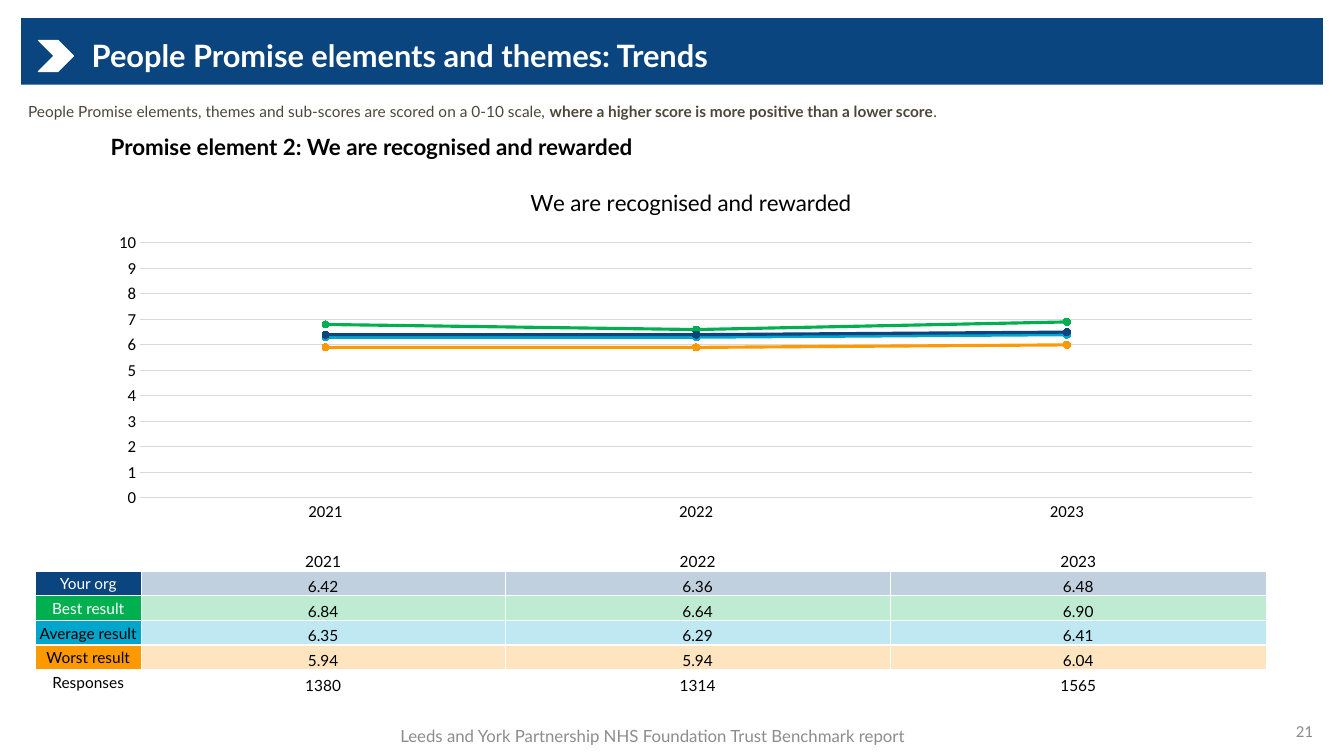
from pptx import Presentation
from pptx.chart.data import CategoryChartData
from pptx.dml.color import RGBColor
from pptx.enum.chart import XL_CHART_TYPE as ChartType, XL_MARKER_STYLE as Marker, XL_TICK_MARK as Tick
from pptx.enum.shapes import MSO_SHAPE as Preset
from pptx.enum.text import MSO_ANCHOR as Anchor, MSO_AUTO_SIZE as AutoSize, PP_ALIGN as Align
from pptx.oxml import parse_xml
from pptx.oxml.ns import nsdecls, qn
from pptx.util import Inches, Pt

WHITE = RGBColor(0xFF, 0xFF, 0xFF)
BLACK = RGBColor(0, 0, 0)
NAVY = RGBColor(0x0B, 0x45, 0x7F)
GREEN = RGBColor(0x00, 0xB0, 0x50)
CYAN = RGBColor(0x00, 0xA5, 0xCC)
ORANGE = RGBColor(0xFF, 0x99, 0x00)
BROWN = RGBColor(0x4D, 0x46, 0x39)
GREY = RGBColor(0x8C, 0x8C, 0x8C)
GRID = RGBColor(0xD9, 0xD9, 0xD9)

YEARS = ["2021", "2022", "2023"]
# label: (colour, label text colour, yearly scores)
SCORES = {
    "Your org": (NAVY, WHITE, (6.42, 6.36, 6.48)),
    "Best result": (GREEN, WHITE, (6.84, 6.64, 6.90)),
    "Average result": (CYAN, BLACK, (6.35, 6.29, 6.41)),
    "Worst result": (ORANGE, BLACK, (5.94, 5.94, 6.04)),
}
DRAW_ORDER = ["Average result", "Best result", "Worst result", "Your org"]
RESPONSES = (1380, 1314, 1565)


def format_font(font, size, color, bold=False, name="Lato"):
    for attribute, value in {"size": Pt(size), "bold": bold, "name": name}.items():
        setattr(font, attribute, value)
    font.color.rgb = color


def write(frame, parts, size, color, align=Align.LEFT, anchor=Anchor.TOP, name="Lato"):
    """Fill a frame with one paragraph of (text, bold) parts."""
    settings = {"word_wrap": True, "auto_size": AutoSize.NONE, "vertical_anchor": anchor}
    for attribute, value in settings.items():
        setattr(frame, attribute, value)
    paragraph = frame.paragraphs[0]
    paragraph.alignment = align
    for text, bold in parts:
        run = paragraph.add_run()
        run.text = text
        format_font(run.font, size, color, bold, name)
    return paragraph


def add_text(slide, box, parts, size, color, **layout):
    frame = slide.shapes.add_textbox(*map(Inches, box)).text_frame
    write(frame, parts, size, color, **layout)


def add_header(slide, left, top, width, height):
    # Bar and chevron
    for preset, box, color in (
        (Preset.RECTANGLE, (left, top, width, height), NAVY),
        (Preset.CHEVRON, (left + 0.17, top + 0.22, 0.35, 0.31), WHITE),
    ):
        shape = slide.shapes.add_shape(preset, *map(Inches, box))
        shape.shadow.inherit = False
        shape.fill.solid()
        shape.fill.fore_color.rgb = color
        shape.line.color.rgb = color
        shape.line.width = Pt(0.75)
        if preset == Preset.RECTANGLE:
            shape.line.fill.background()

    # Title, brought in front of the bar
    title = slide.shapes.title
    place = {"left": left + 0.6, "top": top + 0.17, "width": 9.61, "height": 0.44}
    for attribute, value in place.items():
        setattr(title, attribute, Inches(value))
    heading = write(title.text_frame, [("People Promise elements and themes: Trends", True)],
                    22, WHITE, anchor=Anchor.MIDDLE)
    heading.line_spacing = 0.9
    title._element.getparent().append(title._element)


def set_layout(element, **fractions):
    """Fix the place of a chart part as fractions of the chart."""
    for old in element.findall(qn("c:layout")):
        element.remove(old)
    inner = '<c:layoutTarget val="inner"/>' if "w" in fractions else ""
    modes = "".join(f'<c:{axis}Mode val="edge"/>' for axis in "xy")
    values = "".join(f'<c:{key} val="{value}"/>' for key, value in fractions.items())
    layout = parse_xml(f'<c:layout {nsdecls("c")}><c:manualLayout>{inner}{modes}{values}'
                       '</c:manualLayout></c:layout>')
    text = element.find(qn("c:tx"))
    element.insert(0 if text is None else element.index(text) + 1, layout)


def add_trend_chart(slide, left, top, width, height):
    data = CategoryChartData(number_format="0.0")
    data.categories = YEARS
    for label in DRAW_ORDER:
        data.add_series(label, [round(score, 1) for score in SCORES[label][2]])
    chart = slide.shapes.add_chart(ChartType.LINE_MARKERS, *map(Inches, (left, top, width, height)),
                                   data).chart
    format_font(chart.font, 10, BLACK, name="Calibri")
    chart.has_legend = False

    # Title and plot area
    chart.has_title = True
    chart_heading = chart.chart_title.text_frame.paragraphs[0].add_run()
    chart_heading.text = "We are recognised and rewarded"
    format_font(chart_heading.font, 16, BLACK)
    chart.chart_title.include_in_layout = False
    set_layout(chart.chart_title._element, x=4.27 / width, y=0.09 / height)
    set_layout(chart._chartSpace.chart.plotArea,
               x=0.44 / width, y=0.69 / height, w=11.03 / width, h=2.53 / height)

    # Axes
    for axis in (chart.category_axis, chart.value_axis):
        axis.major_tick_mark = axis.minor_tick_mark = Tick.NONE
        format_font(axis.tick_labels.font, 12, BLACK, name="Calibri")
    scale = {"minimum_scale": 0, "maximum_scale": 10, "major_unit": 1, "has_major_gridlines": True}
    for attribute, value in scale.items():
        setattr(chart.value_axis, attribute, value)
    chart.value_axis.tick_labels.number_format = "0"
    chart.value_axis.tick_labels.number_format_is_linked = False
    chart.value_axis.format.line.fill.background()
    for line in (chart.category_axis.format.line, chart.value_axis.major_gridlines.format.line):
        line.color.rgb = GRID
        line.width = Pt(0.75)

    # Score lines
    chart.plots[0].vary_by_categories = False
    for series in chart.plots[0].series:
        color = SCORES[series.name][0]
        series.smooth = False
        series.format.line.color.rgb = color
        series.format.line.width = Pt(2.25)
        series.marker.style = Marker.CIRCLE
        series.marker.size = 5
        series.marker.format.fill.solid()
        series.marker.format.fill.fore_color.rgb = color
        series.marker.format.line.color.rgb = color


def format_cell(cell, text, fill, color, anchor, alpha=None):
    margins = {"margin_left": 0.01, "margin_right": 0.01, "margin_top": 0.01, "margin_bottom": 0}
    for attribute, value in margins.items():
        setattr(cell, attribute, Inches(value))
    cell.vertical_anchor = anchor
    cell.fill.solid()
    cell.fill.fore_color.rgb = fill
    properties = cell._tc.get_or_add_tcPr()
    if alpha:
        tint = properties.find(".//" + qn("a:srgbClr"))
        tint.append(parse_xml(f'<a:alpha {nsdecls("a")} val="{alpha * 1000}"/>'))
    for index, side in enumerate("LRTB"):
        properties.insert(index, parse_xml(
            f'<a:ln{side} {nsdecls("a")} w="12700"><a:solidFill><a:srgbClr val="{WHITE}"/>'
            f'</a:solidFill></a:ln{side}>'))
    paragraph = cell.text_frame.paragraphs[0]
    paragraph.alignment = Align.CENTER
    if text:
        run = paragraph.add_run()
        run.text = text
        format_font(run.font, 11, color)
    else:
        paragraph._p.append(parse_xml(f'<a:endParaRPr {nsdecls("a")} sz="1100"/>'))


def add_score_table(slide, left, top, width, height):
    # label, fill, label colour, tint of the value cells, values
    rows = [("", WHITE, BLACK, None, YEARS)]
    rows += [(label, fill, color, 25, [f"{score:.2f}" for score in scores])
             for label, (fill, color, scores) in SCORES.items()]
    rows.append(("Responses", WHITE, BLACK, None, [str(count) for count in RESPONSES]))

    table = slide.shapes.add_table(len(rows), len(YEARS) + 1,
                                   *map(Inches, (left, top, width, height))).table
    for column, column_width in zip(table.columns, (1.05, 3.61, 3.82, 3.73)):
        column.width = Inches(column_width)
    for number, (label, fill, color, alpha, values) in enumerate(rows):
        table.rows[number].height = Inches(height / len(rows))
        format_cell(table.cell(number, 0), label, fill, color, Anchor.MIDDLE)
        for column, value in enumerate(values, 1):
            format_cell(table.cell(number, column), value, fill, BLACK, Anchor.BOTTOM, alpha)


def add_footer(slide, left, top, width, height):
    add_text(slide, (left + 7.17, top, 3, height), [("21", False)], 12, GREY,
             align=Align.RIGHT, anchor=Anchor.MIDDLE, name="Calibri")
    add_text(slide, (left, top + 0.05, width, height),
             [("Leeds and York Partnership NHS Foundation Trust Benchmark report", False)],
             12, GREY, align=Align.CENTER, anchor=Anchor.MIDDLE)


def main():
    deck = Presentation()
    deck.slide_width, deck.slide_height = Inches(13.33), Inches(7.5)
    slide = deck.slides.add_slide(deck.slide_layouts[5])
    add_header(slide, 0.21, 0.18, 12.91, 0.66)
    add_text(slide, (0.18, 0.96, 13.02, 0.29), [
        ("People Promise elements, themes and sub-scores are scored on a 0-10 scale, ", False),
        ("where a higher score is more positive than a lower score", True),
        (".", False)], 11, BROWN)
    add_score_table(slide, 0.35, 5.42, 12.21, 1.47)
    add_trend_chart(slide, 0.95, 1.72, 11.71, 3.52)
    add_text(slide, (1, 1.27, 6.67, 0.4),
             [("Promise element 2: We are recognised and rewarded", True)], 16, BLACK)
    add_footer(slide, 2.95, 7.05, 7.05, 0.4)
    deck.save("out.pptx")


if __name__ == "__main__":
    main()
